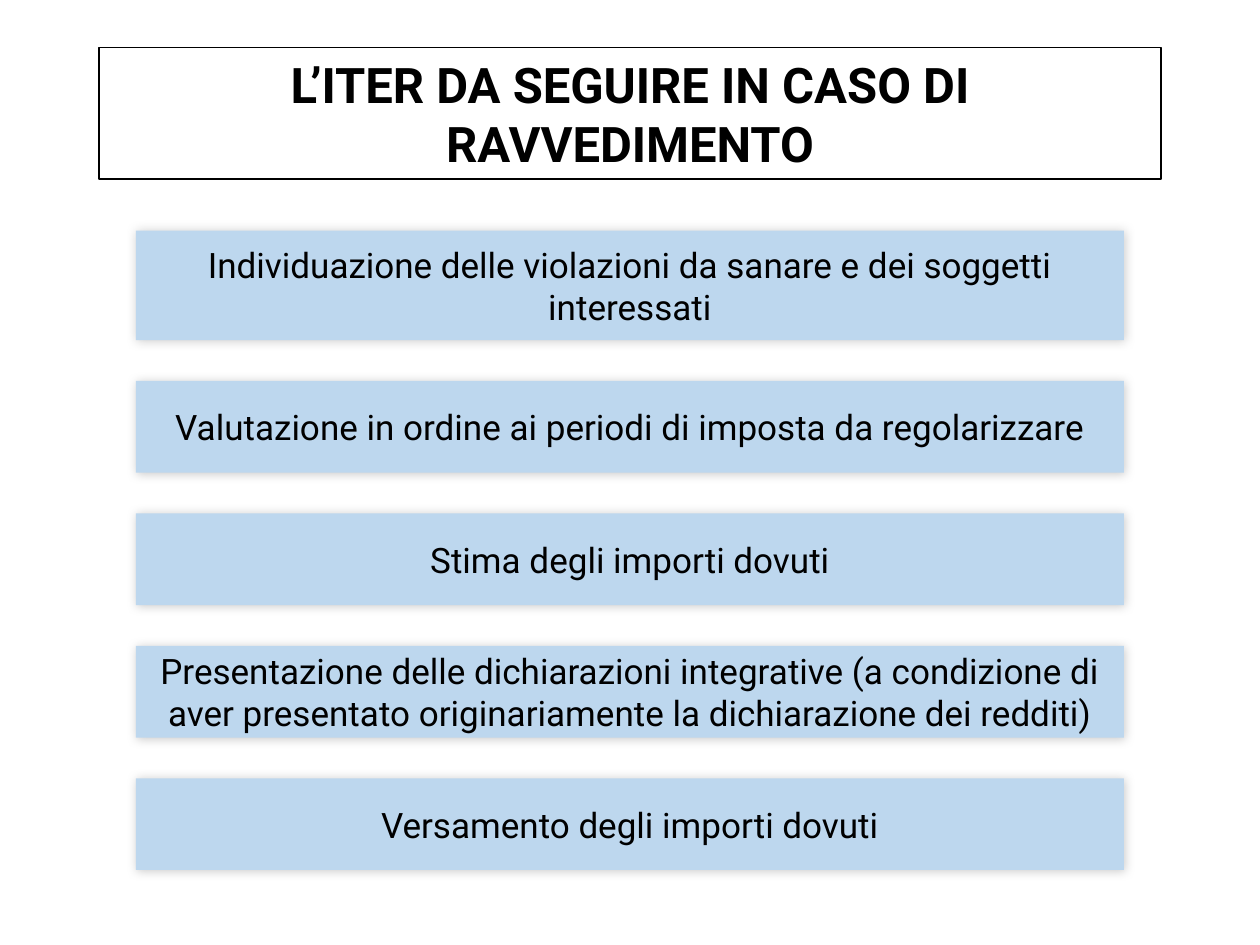
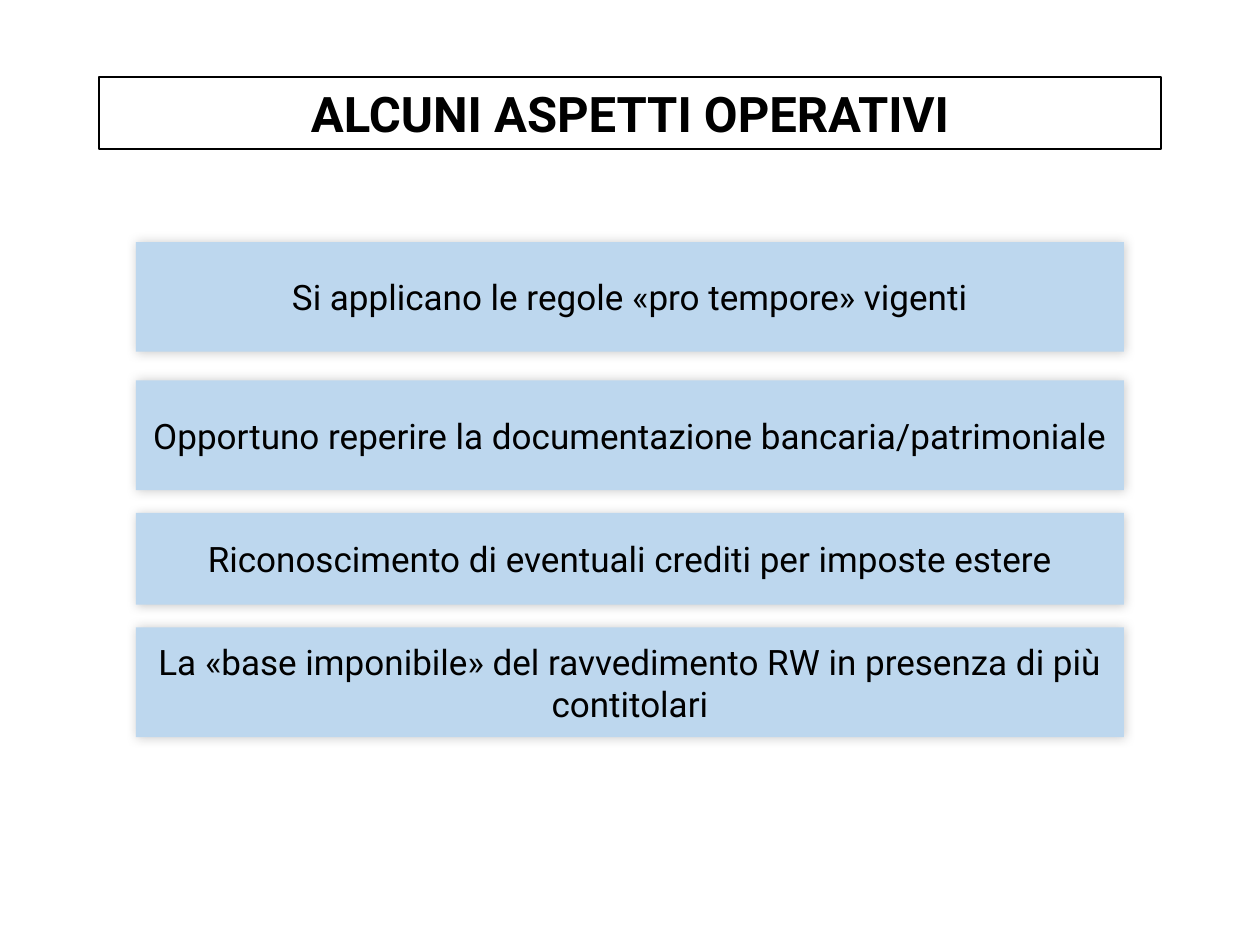
from lxml import etree
from pptx import Presentation
from pptx.dml.color import RGBColor
from pptx.enum.shapes import MSO_SHAPE
from pptx.enum.text import MSO_ANCHOR, MSO_AUTO_SIZE, PP_ALIGN
from pptx.oxml.ns import qn
from pptx.util import Cm, Pt

RECTANGLE = MSO_SHAPE.RECTANGLE
MIDDLE = MSO_ANCHOR.MIDDLE
CENTER = PP_ALIGN.CENTER
NO_AUTOFIT = MSO_AUTO_SIZE.NONE

BLACK = RGBColor(0x00, 0x00, 0x00)
WHITE = RGBColor(0xFF, 0xFF, 0xFF)
LIGHT_BLUE = RGBColor(0xBD, 0xD7, 0xEE)
FONT = "Roboto"

TITLE_ONLY = 5
SLIDE_WIDTH, SLIDE_HEIGHT = 25.4, 19.05
TITLE_WIDTH, TITLE_MIDDLE = 21.42, 2.28
BAND_WIDTH = 19.92
TALL, SHORT = 2.21, 1.85

PROCEDURE = [
    ("Individuazione delle violazioni da sanare e dei soggetti interessati", TALL),
    ("Valutazione in ordine ai periodi di imposta da regolarizzare", SHORT),
    ("Stima degli importi dovuti", SHORT),
    ("Presentazione delle dichiarazioni integrative (a condizione di aver "
     "presentato originariamente la dichiarazione dei redditi)", SHORT),
    ("Versamento degli importi dovuti", SHORT),
]
OPERATING_ASPECTS = [
    ("Si applicano le regole «pro tempore» vigenti", TALL),
    ("Opportuno reperire la documentazione bancaria/patrimoniale", TALL),
    ("Riconoscimento di eventuali crediti per imposte estere", SHORT),
    ("La «base imponibile» del ravvedimento RW in presenza di più contitolari", TALL),
]


def place_centered(shape, top, width, height):
    """Centre the shape across the slide; lengths are in centimetres."""
    shape.left, shape.top = Cm((SLIDE_WIDTH - width) / 2), Cm(top)
    shape.width, shape.height = Cm(width), Cm(height)


def set_text(shape, text, size, bold=False):
    frame = shape.text_frame
    frame.text = text
    frame.word_wrap = True
    frame.auto_size = NO_AUTOFIT
    frame.vertical_anchor = MIDDLE
    frame.margin_left = frame.margin_right = Cm(0.13)
    frame.margin_top = frame.margin_bottom = Cm(0.13)
    paragraph = frame.paragraphs[0]
    paragraph.alignment = CENTER
    font = paragraph.runs[0].font
    font.name, font.size, font.bold = FONT, Pt(size), bold
    font.color.rgb = BLACK


def add_soft_shadow(shape):
    shape.shadow.inherit = False
    effects = shape.element.spPr.find(qn("a:effectLst"))
    shadow = etree.SubElement(effects, qn("a:outerShdw"), blurRad=str(Pt(6)),
                              dist="0", dir="13500000", rotWithShape="0")
    color = etree.SubElement(shadow, qn("a:srgbClr"), val=str(BLACK))
    etree.SubElement(color, qn("a:alpha"), val="20000")


def set_title(slide, text, height):
    title = slide.shapes.title
    place_centered(title, TITLE_MIDDLE - height / 2, TITLE_WIDTH, height)
    title.fill.solid()
    title.fill.fore_color.rgb = WHITE
    title.line.color.rgb = BLACK
    title.line.width = Pt(1)
    set_text(title, text, 28, bold=True)


def add_band(slide, text, top, height):
    band = slide.shapes.add_shape(RECTANGLE, 0, 0, 0, 0)
    place_centered(band, top, BAND_WIDTH, height)
    band.fill.solid()
    band.fill.fore_color.rgb = LIGHT_BLUE
    band.line.fill.background()
    add_soft_shadow(band)
    set_text(band, text, 20)


def add_band_slide(deck, title, title_height, bands, top, gaps):
    """Stack the bands from top down, with one gap after each band but the last."""
    slide = deck.slides.add_slide(deck.slide_layouts[TITLE_ONLY])
    set_title(slide, title, title_height)
    for (text, height), gap in zip(bands, gaps + [0]):
        add_band(slide, text, top, height)
        top += height + gap


def main():
    deck = Presentation()
    deck.slide_width, deck.slide_height = Cm(SLIDE_WIDTH), Cm(SLIDE_HEIGHT)
    add_band_slide(deck, "L’ITER DA SEGUIRE IN CASO DI RAVVEDIMENTO", 2.65,
                   PROCEDURE, 4.65, [0.82] * 4)
    add_band_slide(deck, "ALCUNI ASPETTI OPERATIVI", 1.45,
                   OPERATING_ASPECTS, 4.88, [0.58, 0.46, 0.46])
    deck.save("out.pptx")


if __name__ == "__main__":
    main()
